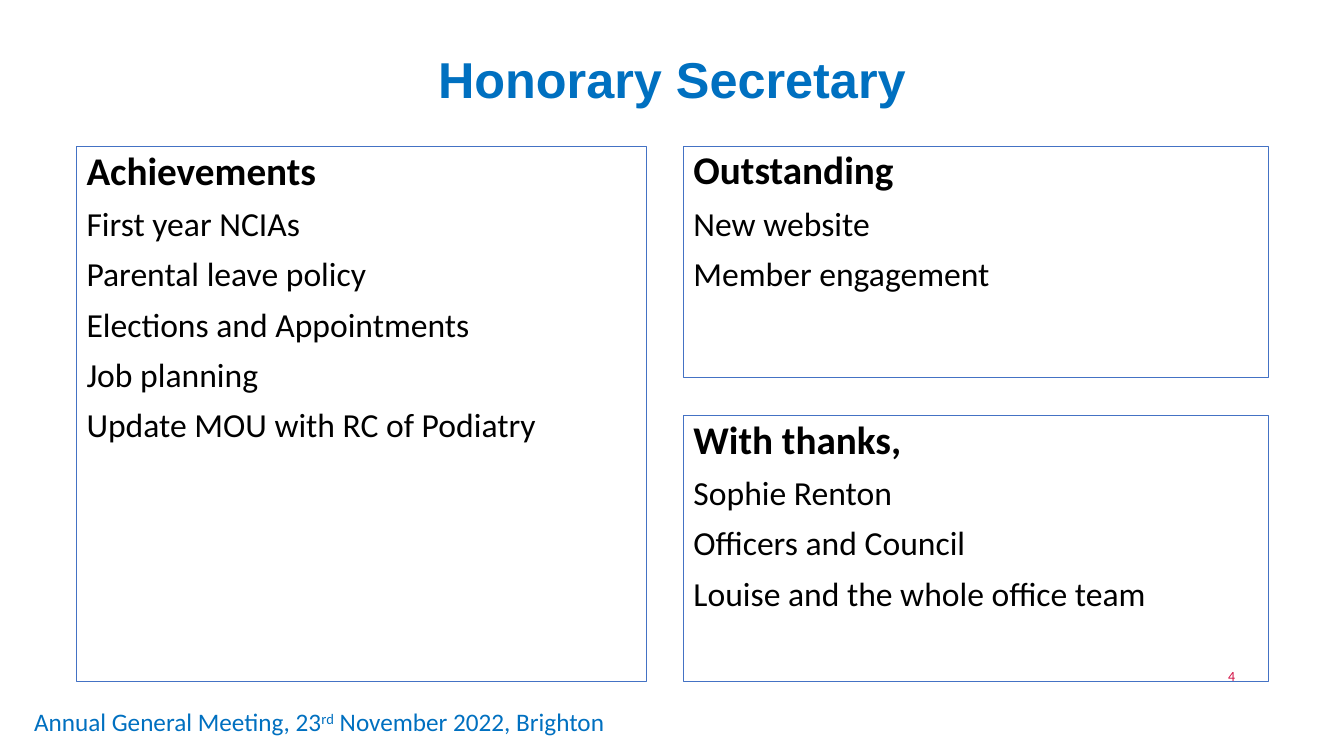
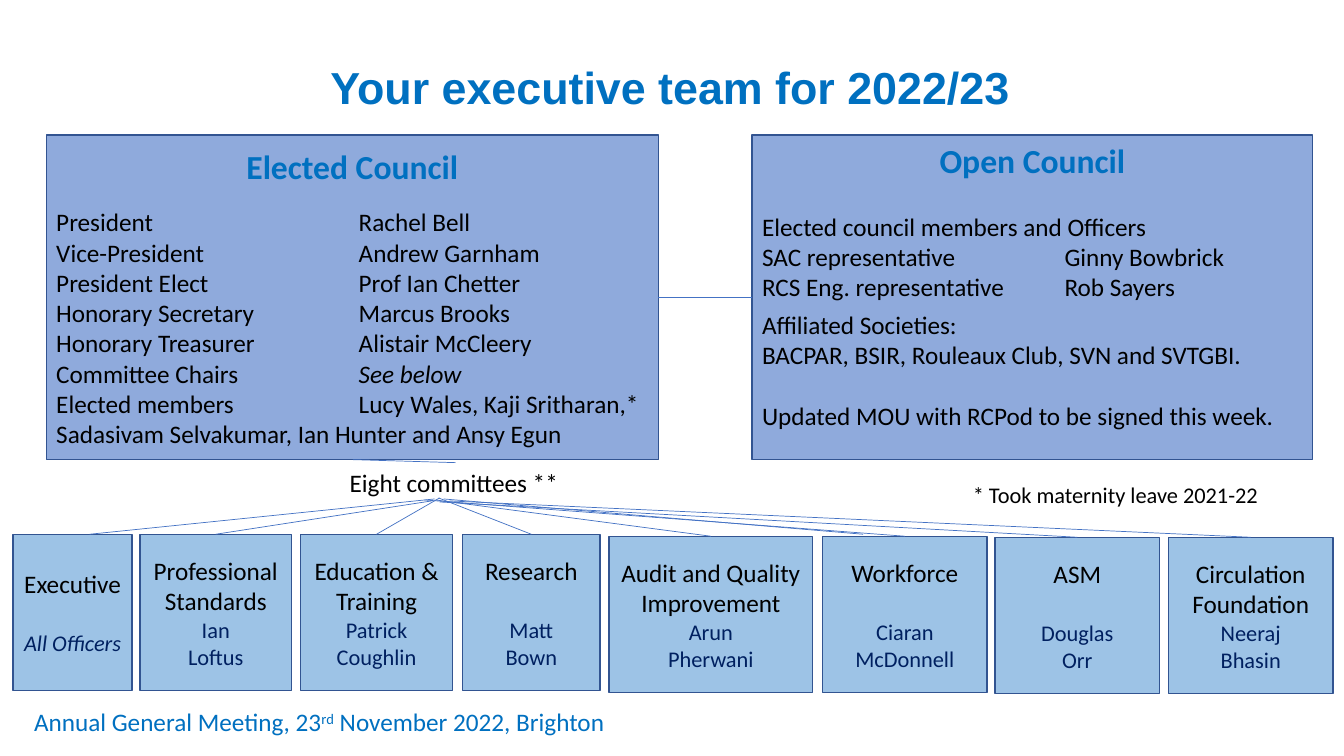
from dataclasses import dataclass, replace
from typing import Any, Optional

import pptx
import pptx.dml.color
import pptx.enum.shapes
import pptx.enum.text
import pptx.oxml
import pptx.oxml.ns
import pptx.util

Inches = pptx.util.Inches
Pt = pptx.util.Pt
RECTANGLE = pptx.enum.shapes.MSO_SHAPE.RECTANGLE
STRAIGHT = pptx.enum.shapes.MSO_CONNECTOR.STRAIGHT
ANCHOR = pptx.enum.text.MSO_ANCHOR
ALIGN = pptx.enum.text.PP_ALIGN
TOP, LEFT, RIGHT = 0, 1, 3  # connection sites of a rectangle


# Records
@dataclass(frozen=True)
class Style:
    size: float
    color: str
    bold: bool = False
    italic: bool = False
    font: str = "Calibri"
    baseline: int = 0


@dataclass(frozen=True)
class Para:
    text: str
    style: Style
    centred: bool = False
    before: float = 0
    spacing: Optional[float] = None
    tab: float = 0
    tail: tuple[tuple[str, Style], ...] = ()


@dataclass(frozen=True)
class Frame:
    left: float
    top: float
    width: float
    height: float


@dataclass(frozen=True)
class Look:
    line: str
    weight: float
    fill: Optional[str] = None


@dataclass(frozen=True)
class Panel:
    frame: Frame
    heading: str
    items: tuple[str, ...]


@dataclass(frozen=True)
class Committee:
    name: str
    chair: tuple[str, ...]
    left: float
    top: float
    width: float
    branch: Optional[tuple[float, float]] = None


# Colours and type sizes
@dataclass(frozen=True)
class Theme:
    accent: str = "4472C4"
    title: Style = Style(36, "0070C0", bold=True, font="Arial")
    footer: Style = Style(18, "0070C0")
    number: Style = Style(10, "D31145")
    panel_heading: Style = Style(28, "000000", bold=True)
    panel_item: Style = Style(24, "000000")
    council_heading: Style = Style(24, "0070C0", bold=True)
    body: Style = Style(18, "000000")
    note: Style = Style(16, "000000")
    chair: Style = Style(16, "002060")
    panel: Look = Look("4472C4", 0.75)
    council: Look = Look("325491", 1, "8FAADC")
    committee: Look = Look("325491", 1, "9DC3E6")
    blank_line: float = 22


THEME = Theme()


def rgb(value: str) -> pptx.dml.color.RGBColor:
    return pptx.dml.color.RGBColor.from_string(value)


# Text
def format_span(span: Any, style: Style) -> None:
    span.font.name = style.font
    span.font.size = Pt(style.size)
    span.font.bold = style.bold
    span.font.italic = style.italic
    span.font.color.rgb = rgb(style.color)
    if style.baseline:
        span.font._element.set("baseline", str(style.baseline * 1000))


def write(text_frame: Any, paras: list[Para]) -> None:
    for index, item in enumerate(paras):
        para = text_frame.paragraphs[0] if index == 0 else text_frame.add_paragraph()
        para.text = item.text
        para.alignment = ALIGN.CENTER if item.centred else ALIGN.LEFT
        if item.tab:
            tabs = pptx.oxml.parse_xml(
                f'<a:tabLst {pptx.oxml.ns.nsdecls("a")}>'
                f'<a:tab pos="{Inches(item.tab)}" algn="l"/></a:tabLst>')
            para._p.get_or_add_pPr().append(tabs)
        if index and item.before:
            para.space_before = Pt(item.before)
        if item.spacing:
            para.line_spacing = item.spacing
        format_span(para.runs[0], item.style)
        for text, style in item.tail:
            span = para.add_run()
            span.text = text
            format_span(span, style)


def place(frame: Frame) -> tuple[int, ...]:
    return tuple(Inches(n) for n in (frame.left, frame.top, frame.width, frame.height))


def add_text(page: Any, frame: Frame, para: Para, wrap: bool = False,
             inset: bool = True) -> Any:
    box = page.shapes.add_textbox(*place(frame))
    text_frame = box.text_frame
    text_frame.word_wrap = wrap
    if not inset:
        text_frame.margin_left = text_frame.margin_right = 0
        text_frame.margin_top = text_frame.margin_bottom = 0
    write(text_frame, [para])
    return box


# Shapes
def add_box(page: Any, frame: Frame, look: Look, paras: list[Para],
            middle: bool = False) -> Any:
    box = page.shapes.add_shape(RECTANGLE, *place(frame))
    box.shadow.inherit = False
    if look.fill:
        box.fill.solid()
        box.fill.fore_color.rgb = rgb(look.fill)
    else:
        box.fill.background()
    box.line.color.rgb = rgb(look.line)
    box.line.width = Pt(look.weight)
    box.text_frame.word_wrap = True
    box.text_frame.vertical_anchor = ANCHOR.MIDDLE if middle else ANCHOR.TOP
    write(box.text_frame, paras)
    return box


def add_line(page: Any, start: tuple[float, float], end: tuple[float, float]) -> Any:
    line = page.shapes.add_connector(STRAIGHT, *(Inches(n) for n in start + end))
    line.line.color.rgb = rgb(THEME.accent)
    line.line.width = Pt(0.5)
    line._element.spPr.append(
        pptx.oxml.parse_xml(f'<a:effectLst {pptx.oxml.ns.nsdecls("a")}/>'))
    return line


# Parts shared by the slides
def add_page(deck: Any, title: str, frame: Frame, size: float) -> Any:
    page = deck.slides.add_slide(deck.slide_layouts[6])
    raised = replace(THEME.footer, baseline=30)
    add_text(page, Frame(0.24, 6.96, 5.94, 0.4),
             Para("Annual General Meeting, 23", THEME.footer,
                  tail=(("rd", raised), (" November 2022, Brighton", THEME.footer))))
    add_text(page, frame, Para(title, replace(THEME.title, size=size), centred=True),
             wrap=True, inset=False)
    return page


# Slide: Honorary Secretary
PANELS = (
    Panel(Frame(0.76, 1.45, 5.65, 5.31), "Achievements",
          ("First year NCIAs", "Parental leave policy", "Elections and Appointments",
           "Job planning", "Update MOU with RC of Podiatry")),
    Panel(Frame(6.78, 1.45, 5.8, 2.3), "Outstanding",
          ("New website", "Member engagement")),
    Panel(Frame(6.78, 4.12, 5.8, 2.64), "With thanks,",
          ("Sophie Renton", "Officers and Council", "Louise and the whole office team")),
)


def build_secretary(deck: Any) -> None:
    page = add_page(deck, "Honorary Secretary", Frame(0.51, 0.48, 12.31, 0.78), 36)
    number = add_text(page, Frame(12.04, 6.57, 0.35, 0.28),
                      Para("4", THEME.number, centred=True), wrap=True, inset=False)
    number.text_frame.vertical_anchor = ANCHOR.MIDDLE
    for panel in PANELS:
        paras = [Para(panel.heading, THEME.panel_heading, spacing=0.9)]
        paras += [Para(item, THEME.panel_item, before=10, spacing=0.9)
                  for item in panel.items]
        add_box(page, panel.frame, THEME.panel, paras)


# Slide: executive team
OFFICERS = (
    ("President", "Rachel Bell"),
    ("Vice-President", "Andrew Garnham"),
    ("President Elect", "Prof Ian Chetter"),
    ("Honorary Secretary", "Marcus Brooks"),
    ("Honorary Treasurer", "Alistair McCleery"),
    ("Committee Chairs", "See below"),
    ("Elected members", "Lucy Wales, Kaji Sritharan,* "
     "Sadasivam Selvakumar, Ian Hunter and Ansy Egun"),
)
OPEN_COUNCIL = (  # text and the space before it
    ("Elected council members and Officers", THEME.blank_line),
    ("SAC representative\tGinny Bowbrick", 0),
    ("RCS Eng. representative\tRob Sayers", 0),
    ("Affiliated Societies:", 5),
    ("BACPAR, BSIR, Rouleaux Club, SVN and SVTGBI.", 0),
    ("Updated MOU with RCPod to be signed this week.", THEME.blank_line),
)
COMMITTEES = (
    Committee("Executive", ("All Officers",), 0.13, 5.3, 1.18),
    Committee("Professional Standards", ("Ian", "Loftus"), 1.39, 5.3, 1.5, (4.28, 4.97)),
    Committee("Education & Training", ("Patrick Coughlin",), 2.98, 5.3, 1.51, (4.36, 4.94)),
    Committee("Research", ("Matt", "Bown"), 4.59, 5.3, 1.36, (4.35, 4.94)),
    Committee("Audit and Quality Improvement", ("Arun", "Pherwani"),
              6.04, 5.32, 2.02, (4.32, 4.96)),
    Committee("Workforce", ("Ciaran McDonnell",), 8.16, 5.32, 1.63, (4.21, 4.96)),
    Committee("ASM", ("Douglas", "Orr"), 9.87, 5.33, 1.63, (4.36, 4.98)),
    Committee("Circulation Foundation", ("Neeraj", "Bhasin"),
              11.59, 5.33, 1.63, (4.46, 4.97)),
)
LOOSE_LINES = (
    ((4.31, 4.95), (0.89, 5.3)),
    ((3.5, 4.56), (4.52, 4.59)),
    ((4.4, 4.95), (8.56, 5.3)),
)


def add_committee(page: Any, committee: Committee) -> None:
    one_line = " " not in committee.name
    style = replace(THEME.chair, italic=committee.name == "Executive")
    paras = [Para(committee.name, THEME.body, centred=True)]
    paras += [Para(name, style, centred=True,
                   before=THEME.blank_line if one_line and index == 0 else 0)
              for index, name in enumerate(committee.chair)]
    box = add_box(page, Frame(committee.left, committee.top, committee.width, 1.55),
                  THEME.committee, paras, middle=True)
    if committee.branch:
        top_middle = (committee.left + committee.width / 2, committee.top)
        add_line(page, committee.branch, top_middle).end_connect(box, TOP)


def build_team(deck: Any) -> None:
    page = add_page(deck, "Your executive team for 2022/23",
                    Frame(1.21, 0.59, 10.88, 0.78), 32)

    # Councils
    elected = [Para("Elected Council", THEME.council_heading, centred=True)]
    for index, (role, holder) in enumerate(OFFICERS):
        style = replace(THEME.body, italic=holder == "See below")
        elected.append(Para(role + "\t", THEME.body, before=0 if index else 14.5,
                            tab=3, tail=((holder, style),)))
    opened = [Para("Open Council", THEME.council_heading, centred=True)]
    opened += [Para(text, THEME.body, before=before, tab=3)
               for text, before in OPEN_COUNCIL]
    elected_box = add_box(page, Frame(0.46, 1.34, 6.07, 3.22), THEME.council,
                          elected, middle=True)
    open_box = add_box(page, Frame(7.46, 1.34, 5.56, 3.22), THEME.council, opened)
    link = add_line(page, (6.53, 2.95), (7.46, 2.95))
    link.begin_connect(elected_box, RIGHT)
    link.end_connect(open_box, LEFT)

    # Committees
    add_text(page, Frame(3.37, 4.59, 2.3, 0.4), Para("Eight committees **", THEME.body))
    for committee in COMMITTEES:
        add_committee(page, committee)
    for start, end in LOOSE_LINES:
        add_line(page, start, end)
    add_text(page, Frame(9.55, 4.72, 3.07, 0.37),
             Para("* Took maternity leave 2021-22", THEME.note))


def main() -> None:
    deck = pptx.Presentation()
    deck.slide_width = Inches(13.33)
    deck.slide_height = Inches(7.5)
    build_secretary(deck)
    build_team(deck)
    deck.save("out.pptx")


if __name__ == "__main__":
    main()
